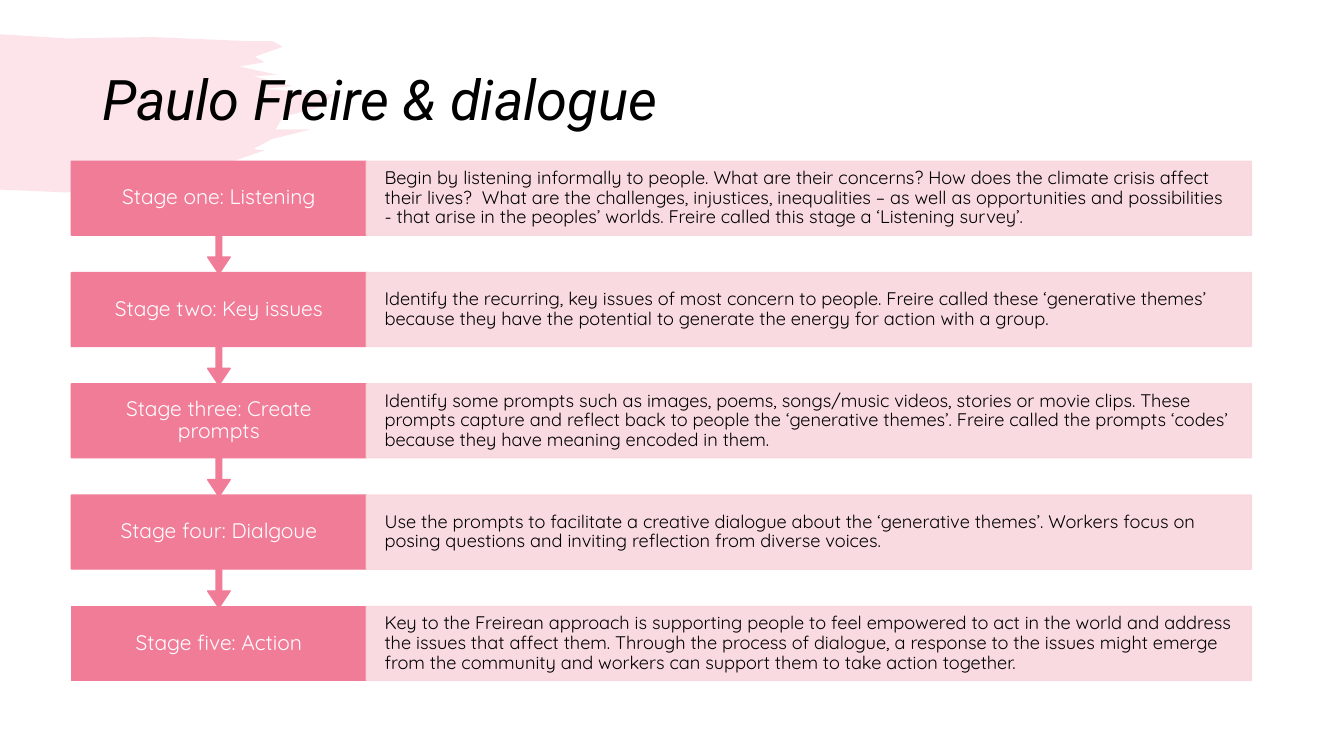
from lxml import etree
from pptx import Presentation
from pptx.dml.color import RGBColor
from pptx.enum import shapes, text
from pptx.oxml import ns
from pptx.util import Pt

COLOURS = {"stage": "F07C98", "detail": "F9D7DD", "light": "FFFFFF", "dark": "000000"}

STAGES = [
    ("Stage one: Listening",
     "Begin by listening informally to people. What are their concerns? How does the climate "
     "crisis affect their lives?  What are the challenges, injustices, inequalities – as well as "
     "opportunities and possibilities - that arise in the peoples’ worlds. Freire called this "
     "stage a ‘Listening survey’."),
    ("Stage two: Key issues",
     "Identify the recurring, key issues of most concern to people. Freire called these "
     "‘generative themes’ because they have the potential to generate the energy for action "
     "with a group."),
    ("Stage three: Create prompts",
     "Identify some prompts such as images, poems, songs/music videos, stories or movie clips. "
     "These prompts capture and reflect back to people the ‘generative themes’. Freire called "
     "the prompts ‘codes’ because they have meaning encoded in them."),
    ("Stage four: Dialgoue",
     "Use the prompts to facilitate a creative dialogue about the ‘generative themes’. Workers "
     "focus on posing questions and inviting reflection from diverse voices."),
    ("Stage five: Action",
     "Key to the Freirean approach is supporting people to feel empowered to act in the world "
     "and address the issues that affect them. Through the process of dialogue, a response to "
     "the issues might emerge from the community and workers can support them to take action "
     "together."),
]

# Outline of the brush stroke in points, clockwise from its top left corner.
BRUSH_OUTLINE = [
    (0, 0), (48, 3), (109, 2), (179, 5), (195, 5), (202, 9), (182, 16), (189, 20), (171, 23),
    (198, 29), (181, 30), (209, 37), (189, 39), (238, 43), (229, 52), (202, 59), (197, 68),
    (222, 68), (194, 75), (181, 82), (189, 83), (142, 99), (73, 111), (47, 113), (0, 111),
]


def set_alpha(fill, percent):
    """Make the colour of a solid fill see-through."""
    colour = fill._xPr.find(".//" + ns.qn("a:srgbClr"))
    etree.SubElement(colour, ns.qn("a:alpha"), val=str(percent * 1000))


def paint(shape, colour, alpha=100, outline=True):
    shape.shadow.inherit = False
    fills = [shape.fill]
    if outline:
        shape.line.width = Pt(1)
        fills.append(shape.line.fill)
    else:
        shape.line.fill.background()
    for fill in fills:
        fill.solid()
        fill.fore_color.rgb = RGBColor.from_string(COLOURS[colour])
        if alpha < 100:
            set_alpha(fill, alpha)


def write(shape, words, colour, inset, alignment=text.PP_ALIGN.LEFT, **font_values):
    frame = shape.text_frame
    frame_values = {"word_wrap": True, "vertical_anchor": text.MSO_ANCHOR.MIDDLE,
                    "margin_left": Pt(inset), "margin_right": Pt(inset),
                    "margin_top": 0, "margin_bottom": 0}
    for name, value in frame_values.items():
        setattr(frame, name, value)
    paragraph = frame.paragraphs[0]
    paragraph.alignment = alignment
    paragraph.line_spacing = 0.9
    run = paragraph.add_run()
    run.text = words
    for name, value in font_values.items():
        setattr(run.font, name, value)
    run.font.color.rgb = RGBColor.from_string(COLOURS[colour])


def add_brush_stroke(slide, left, top):
    builder = slide.shapes.build_freeform(*BRUSH_OUTLINE[0], scale=Pt(1))
    builder.add_line_segments(BRUSH_OUTLINE[1:])
    stroke = builder.convert_to_shape(Pt(left), Pt(top))
    paint(stroke, "stage", alpha=20, outline=False)


def add_title(slide, left, top, width, height):
    title = slide.shapes.add_textbox(Pt(left), Pt(top), Pt(width), Pt(height))
    write(title, "Paulo Freire & dialogue", "dark", 7.2,
          name="Roboto", size=Pt(40), italic=True)


def add_stage(slide, left, top, width, height, pitch, label, detail, last):
    """Place one stage: its label, its detail and an arrow to the next stage."""
    label_width = 0.25 * width
    kind = shapes.MSO_SHAPE.RECTANGLE if last else shapes.MSO_SHAPE.DOWN_ARROW_CALLOUT
    full_height = height if last else pitch + 1
    label_box = slide.shapes.add_shape(kind, Pt(left), Pt(top), Pt(label_width), Pt(full_height))
    if not last:
        for index, value in enumerate((0.05, 0.1, 0.15, height / full_height)):
            label_box.adjustments[index] = value
    paint(label_box, "stage")
    write(label_box, label, "light", 15, text.PP_ALIGN.CENTER, name="Quicksand", size=Pt(15))

    detail_box = slide.shapes.add_shape(shapes.MSO_SHAPE.RECTANGLE, Pt(left + label_width),
                                        Pt(top), Pt(width - label_width), Pt(height))
    paint(detail_box, "detail", alpha=90)
    write(detail_box, detail, "dark", 13, name="Quicksand", size=Pt(13))


def add_stages(slide, left, top, width, height, pitch):
    last_index = len(STAGES) - 1
    for index in range(last_index, -1, -1):
        add_stage(slide, left, top + index * pitch, width, height, pitch,
                  *STAGES[index], last=index == last_index)


def main():
    presentation = Presentation()
    presentation.slide_width, presentation.slide_height = Pt(960), Pt(540)
    slide = presentation.slides.add_slide(presentation.slide_layouts[6])
    add_brush_stroke(slide, 0, 24.5)
    add_title(slide, 66, 21, 828, 104)
    add_stages(slide, 51, 115.2, 843, 52.8, 79.5)
    presentation.save("out.pptx")


if __name__ == "__main__":
    main()
